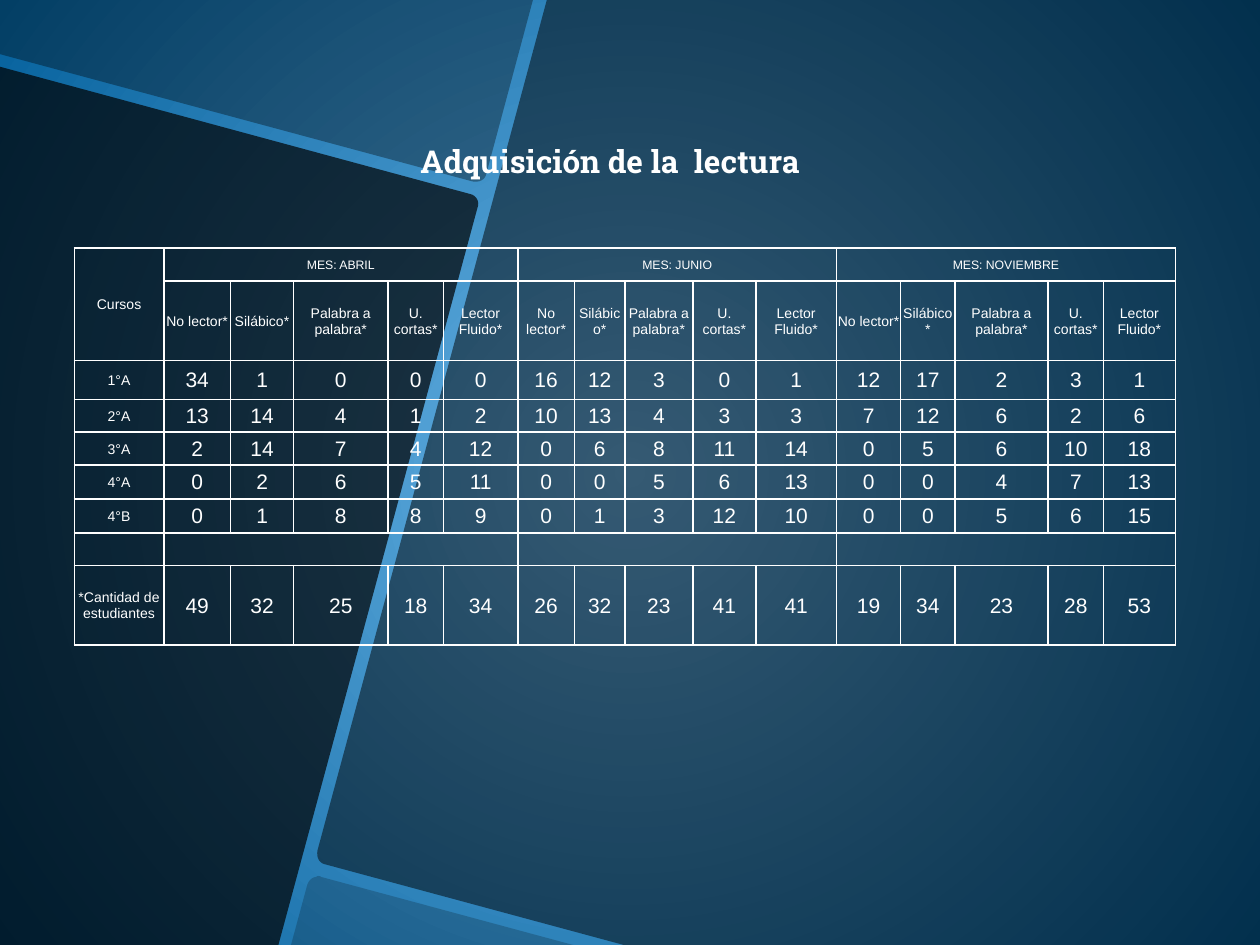
from lxml.etree import SubElement
from pptx import Presentation
from pptx.dml.color import RGBColor
from pptx.enum.text import MSO_ANCHOR, PP_ALIGN
from pptx.oxml import parse_xml
from pptx.oxml.ns import nsdecls, qn
from pptx.util import Inches, Pt

WHITE = "FFFFFF"
CURVE_STEPS = 8

PANELS = [
    (70, [(0, 0.53), (3.73, 1.54), (3.78, 1.55, 3.81, 1.6, 3.79, 1.65),
          (2.21, 7.5), (0, 7.5)]),
    (35, [(0, 0), (4.23, 0), (3.86, 1.38), (3.85, 1.43, 3.8, 1.45, 3.75, 1.44),
          (0, 0.43)]),
    (20, [(2.51, 6.96), (2.52, 6.95, 2.54, 6.95, 2.55, 6.96), (4.55, 7.5),
          (2.31, 7.5), (2.44, 7.02), (2.45, 6.99, 2.48, 6.96, 2.51, 6.96)]),
    (50, [(4.34, 0), (10, 0), (10, 7.5), (4.95, 7.5), (2.58, 6.86),
          (2.53, 6.85, 2.51, 6.8, 2.52, 6.75)]),
]

MONTHS = ["MES: ABRIL", "MES: JUNIO", "MES: NOVIEMBRE"]
LEVELS = ["No lector*", "Silábico*", "Palabra a palabra*", "U. cortas*", "Lector Fluido*"]
COUNTS = {
    "1°A": [34, 1, 0, 0, 0, 16, 12, 3, 0, 1, 12, 17, 2, 3, 1],
    "2°A": [13, 14, 4, 1, 2, 10, 13, 4, 3, 3, 7, 12, 6, 2, 6],
    "3°A": [2, 14, 7, 4, 12, 0, 6, 8, 11, 14, 0, 5, 6, 10, 18],
    "4°A": [0, 2, 6, 5, 11, 0, 0, 5, 6, 13, 0, 0, 4, 7, 13],
    "4°B": [0, 1, 8, 8, 9, 0, 1, 3, 12, 10, 0, 0, 5, 6, 15],
}
TOTALS = [49, 32, 25, 18, 34, 26, 32, 23, 41, 41, 19, 34, 23, 28, 53]
COLUMN_WIDTHS = [0.71, 0.53, 0.5, 0.75, 0.44, 0.59, 0.45, 0.4,
                 0.54, 0.5, 0.64, 0.51, 0.43, 0.74, 0.44, 0.57]
ROW_HEIGHTS = [0.26, 0.63, 0.31, 0.26, 0.26, 0.27, 0.27, 0.26, 0.63]


def color(code):
    return RGBColor.from_string(code)


def apply(target, values):
    for name, value in values.items():
        setattr(target, name, value)


def curve_points(start, curve):
    x1, y1, x2, y2, x3, y3 = curve
    points = []
    for step in range(1, CURVE_STEPS + 1):
        t = step / CURVE_STEPS
        weights = [(1 - t) ** 3, 3 * t * (1 - t) ** 2, 3 * t ** 2 * (1 - t), t ** 3]
        points.append(tuple(sum(w * v for w, v in zip(weights, axis))
                            for axis in [(start[0], x1, x2, x3), (start[1], y1, y2, y3)]))
    return points


def outline(segments):
    points = []
    for segment in segments:
        points += [segment] if len(segment) == 2 else curve_points(points[-1], segment)
    return [(Inches(x), Inches(y)) for x, y in points]


class Page:
    cell_format = dict(
        vertical_anchor=MSO_ANCHOR.MIDDLE, margin_left=Inches(0.01),
        margin_right=Inches(0.01), margin_top=Inches(0.01), margin_bottom=0)
    title_format = dict(
        word_wrap=True, vertical_anchor=MSO_ANCHOR.BOTTOM, margin_left=Inches(0.07),
        margin_right=Inches(0.07), margin_top=Inches(0.04), margin_bottom=Inches(0.04))

    def __init__(self, deck):
        self.slide = deck.slides.add_slide(deck.slide_layouts[6])

    def background(self, center, edge):
        fill = self.slide.background.fill
        fill.gradient()
        for stop, code, position in zip(fill.gradient_stops, (center, edge), (0, 1)):
            stop.color.rgb = color(code)
            stop.position = position
        gradient = next(self.slide._element.iter(qn("a:gradFill")))
        gradient.replace(gradient.find(qn("a:lin")), parse_xml(
            f'<a:path {nsdecls("a")} path="circle">'
            '<a:fillToRect l="50000" t="50000" r="50000" b="50000"/></a:path>'))

    def panel(self, opacity, segments):
        points = outline(segments)
        builder = self.slide.shapes.build_freeform(*points[0])
        builder.add_line_segments(points[1:], close=True)
        shape = builder.convert_to_shape()
        shape.shadow.inherit = False
        shape.line.fill.background()
        shape.fill.solid()
        shape.fill.fore_color.rgb = color("000000")
        tint = next(shape._element.spPr.iter(qn("a:srgbClr")))
        SubElement(tint, qn("a:alpha"), val=str(opacity * 1000))

    def add_text(self, para, text, size, align=PP_ALIGN.CENTER, font="Arial", bold=False):
        para.alignment = align
        span = para.add_run()
        span.text = text
        apply(span.font, dict(size=Pt(size), name=font, bold=bold))
        span.font.color.rgb = color(WHITE)

    def title(self, text, left, top, width, height):
        box = self.slide.shapes.add_textbox(*map(Inches, (left, top, width, height)))
        apply(box.text_frame, self.title_format)
        self.add_text(box.text_frame.paragraphs[0], text, 18, PP_ALIGN.RIGHT, "Roboto Slab", True)

    def table(self, left, top):
        area = (left, top, sum(COLUMN_WIDTHS), sum(ROW_HEIGHTS))
        table = self.slide.shapes.add_table(
            len(ROW_HEIGHTS), len(COLUMN_WIDTHS), *map(Inches, area)).table
        apply(table, dict(first_row=False, horz_banding=False))
        for column, width in zip(table.columns, COLUMN_WIDTHS):
            column.width = Inches(width)
        for row, height in zip(table.rows, ROW_HEIGHTS):
            row.height = Inches(height)
        for cell in table.iter_cells():
            self.style_cell(cell)
        return table

    def style_cell(self, cell):
        apply(cell, self.cell_format)
        cell.fill.background()
        cell.text_frame.paragraphs[0]._p.get_or_add_endParaRPr().set("sz", "800")
        properties = cell._tc.get_or_add_tcPr()
        for index, side in enumerate("LRTB"):
            properties.insert(index, parse_xml(
                f'<a:ln{side} {nsdecls("a")} w="{Pt(1)}"><a:solidFill>'
                f'<a:srgbClr val="{WHITE}"/></a:solidFill></a:ln{side}>'))

    def fill_cell(self, cell, text, size):
        self.add_text(cell.text_frame.paragraphs[0], text, size)

    def fill_row(self, table, row, heading, counts):
        self.fill_cell(table.cell(row, 0), heading, 8)
        for column, count in enumerate(counts, 1):
            self.fill_cell(table.cell(row, column), str(count), 12)


def main():
    deck = Presentation()
    apply(deck, dict(slide_width=Inches(10), slide_height=Inches(7.5)))
    page = Page(deck)
    page.background("6BB5E7", "05619C")
    for opacity, segments in PANELS:
        page.panel(opacity, segments)
    page.title("Adquisición de la  lectura", 1.22, 0.84, 5.2, 0.63)

    table = page.table(0.59, 1.97)
    table.cell(0, 0).merge(table.cell(1, 0))
    page.fill_cell(table.cell(0, 0), "Cursos", 8)
    spacer_row = len(COUNTS) + 2
    for index, month in enumerate(MONTHS):
        first = 1 + index * len(LEVELS)
        last = first + len(LEVELS) - 1
        for row in (0, spacer_row):
            table.cell(row, first).merge(table.cell(row, last))
        page.fill_cell(table.cell(0, first), month, 7)
        for column, level in enumerate(LEVELS, first):
            page.fill_cell(table.cell(1, column), level, 8)
    for row, (course, counts) in enumerate(COUNTS.items(), 2):
        page.fill_row(table, row, course, counts)
    page.fill_row(table, spacer_row + 1, "*Cantidad de estudiantes", TOTALS)
    deck.save("out.pptx")


if __name__ == "__main__":
    main()
